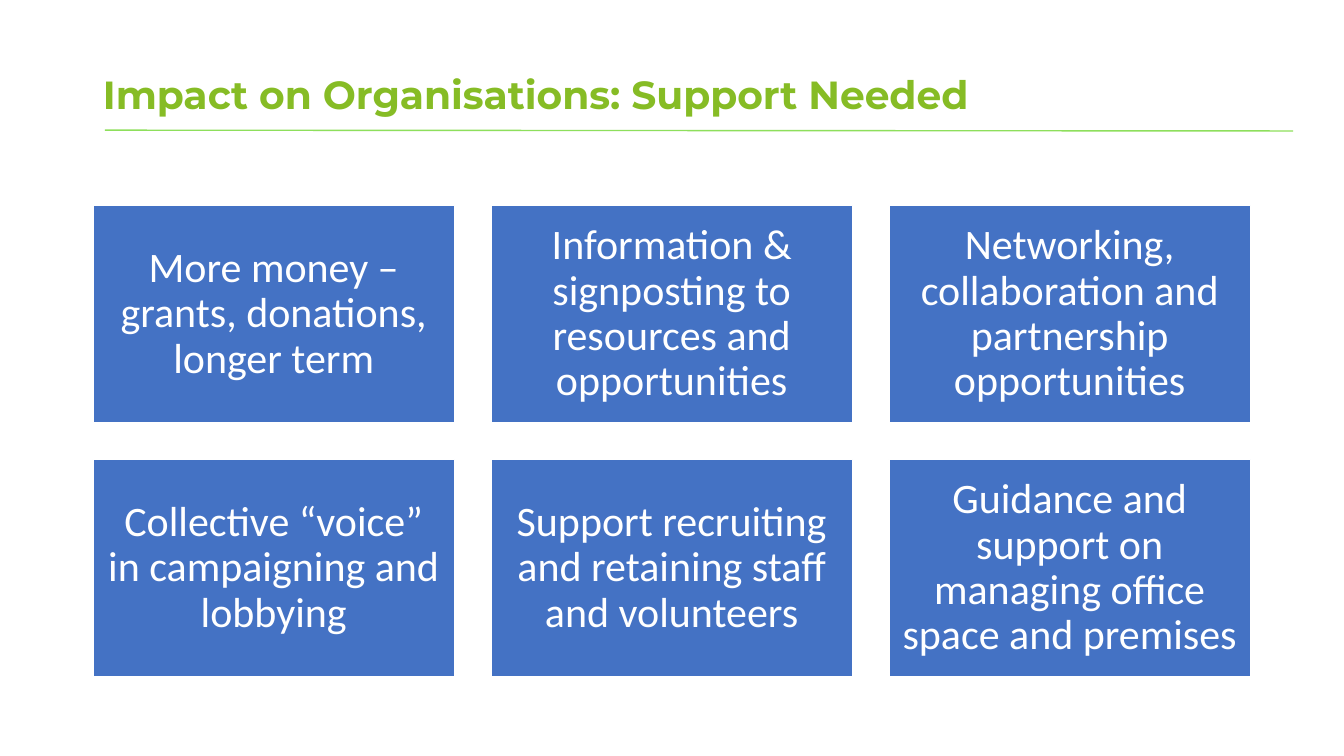
from pptx import Presentation, util as u
from pptx.dml.color import RGBColor
from pptx.enum import shapes, text
from pptx.oxml.ns import qn
from lxml import etree

# Content
HEAD = "Impact on Organisations: Support Needed"
NEEDS = [
    "More money – grants, donations, longer term",
    "Information & signposting to resources and opportunities",
    "Networking, collaboration and partnership opportunities",
    "Collective “voice” in campaigning and lobbying",
    "Support recruiting and retaining staff and volunteers",
    "Guidance and support on managing office space and premises",
]

# Format values
GREEN, LIME, BLUE, WHITE = "86BC25", "8EDF5C", "4472C4", "FFFFFF"
HEAD_FONT = {"name": "Montserrat", "size": u.Pt(28), "bold": True}
CARD_FONT = {"name": "Calibri", "size": u.Pt(30), "bold": False}
PAD = u.Cm(0.3)
CARD_PAD = {f"margin_{side}": PAD for side in ("left", "right", "top", "bottom")}

# Grid, in cm
COLS = 3
LEFT, TOP = 2.34, 5.18
WIDE, HIGH = 9.12, 5.48
STEP_X, STEP_Y = 10.03, 6.4


def paint(part, tone):
    part.rgb = RGBColor.from_string(tone)


def apply(part, values):
    for key, value in values.items():
        setattr(part, key, value)


def write(shape, words, font, tone, align):
    frame = shape.text_frame
    frame.text = words
    apply(frame, {"word_wrap": True, "vertical_anchor": text.MSO_ANCHOR.MIDDLE})
    para = frame.paragraphs[0]
    apply(para, {"alignment": align, "line_spacing": 0.9})
    run = para.runs[0]
    apply(run.font, font)
    paint(run.font.color, tone)


def stroke(line, tone):
    paint(line.color, tone)
    line.width = u.Pt(1)


deck = Presentation()
apply(deck, {"slide_width": u.Cm(33.87), "slide_height": u.Cm(19.05)})
slide = deck.slides.add_slide(deck.slide_layouts[5])

# Title
title = slide.shapes.title
apply(title, {"left": u.Cm(LEFT), "top": u.Cm(1.02),
              "width": u.Cm(29.21), "height": u.Cm(2.82)})
write(title, HEAD, HEAD_FONT, GREEN, text.PP_ALIGN.LEFT)

# Rule under the title
rule = slide.shapes.add_connector(
    shapes.MSO_CONNECTOR.STRAIGHT, u.Cm(2.64), u.Cm(3.28), u.Cm(32.59), u.Cm(3.3))
stroke(rule.line, LIME)
etree.SubElement(rule._element.spPr, qn("a:effectLst"))

# Cards
for i, need in enumerate(NEEDS):
    row, col = divmod(i, COLS)
    card = slide.shapes.add_shape(
        shapes.MSO_SHAPE.RECTANGLE, u.Cm(LEFT + col * STEP_X),
        u.Cm(TOP + row * STEP_Y), u.Cm(WIDE), u.Cm(HIGH))
    card.shadow.inherit = False
    card.fill.solid()
    paint(card.fill.fore_color, BLUE)
    stroke(card.line, WHITE)
    apply(card.text_frame, CARD_PAD)
    write(card, need, CARD_FONT, WHITE, text.PP_ALIGN.CENTER)

deck.save("out.pptx")
